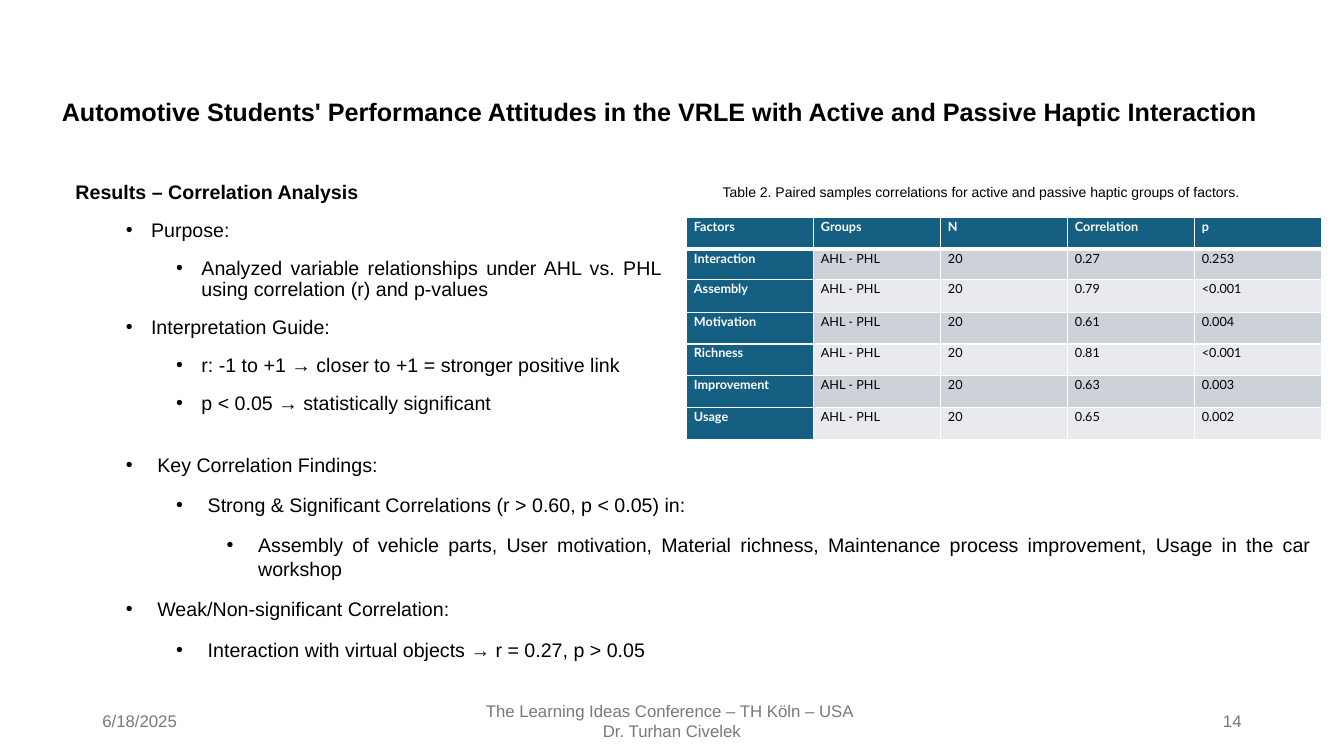
from lxml.etree import SubElement
from pptx import Presentation
from pptx.dml.color import RGBColor
from pptx.enum.text import MSO_ANCHOR as ANCHOR, PP_ALIGN as ALIGN
from pptx.oxml.ns import qn
from pptx.util import Pt

# Content
TITLE = ("Automotive Students' Performance Attitudes in the VRLE "
         "with Active and Passive Haptic Interaction ")
# (level, text); level 0 is a heading without a bullet
GUIDE = [
    (0, "Results – Correlation Analysis"),
    (1, "Purpose:"),
    (2, "Analyzed variable relationships under AHL vs. PHL using correlation (r) and p-values"),
    (1, "Interpretation Guide:"),
    (2, "r: -1 to +1 → closer to +1 = stronger positive link"),
    (2, "p < 0.05 → statistically significant"),
]
FINDINGS = [
    (1, "Key Correlation Findings:"),
    (2, "Strong & Significant Correlations (r > 0.60, p < 0.05) in:"),
    (3, "Assembly of vehicle parts, User motivation, Material richness, "
        "Maintenance process improvement, Usage in the car workshop"),
    (1, "Weak/Non-significant Correlation:"),
    (2, "Interaction with virtual objects → r = 0.27, p > 0.05"),
]
CAPTION = "Table 2. Paired samples correlations for active and passive haptic groups of factors."
HEADER = ("Factors", "Groups", "N", "Correlation", "p")
RESULTS = [
    ("Interaction", "0.27", "0.253"),
    ("Assembly", "0.79", "<0.001"),
    ("Motivation", "0.61", "0.004"),
    ("Richness", "0.81", "<0.001"),
    ("Improvement", "0.63", "0.003"),
    ("Usage", "0.65", "0.002"),
]
ROWS = [HEADER] + [(factor, "AHL - PHL", "20", r, p) for factor, r, p in RESULTS]
ROW_HEIGHTS = (22.6, 21.8, 23.1, 22.7, 22.7, 22.7, 22.7)
COL_WIDTH = 90.72
# (left, width, alignment, lines)
FOOTER = [
    (66, 216, ALIGN.LEFT, ["6/18/2025"]),
    (318, 324, ALIGN.CENTER,
     ["The Learning Ideas Conference – TH Köln – USA ", "Dr. Turhan Civelek"]),
    (678, 216, ALIGN.RIGHT, ["14"]),
]

BLACK = RGBColor(0x00, 0x00, 0x00)
WHITE = RGBColor(0xFF, 0xFF, 0xFF)
GREY = RGBColor(0x79, 0x79, 0x79)
TEAL = RGBColor(0x15, 0x60, 0x82)
BANDS = (RGBColor(0xE8, 0xEA, 0xED), RGBColor(0xCC, 0xD2, 0xD8))

prs = Presentation()
prs.slide_width, prs.slide_height = Pt(960), Pt(540)
s = prs.slides.add_slide(prs.slide_layouts[6])


def add_run(p, text, size, color=BLACK, bold=False, font="Arial"):
    r = p.add_run()
    r.text = text
    r.font.name, r.font.size, r.font.bold = font, Pt(size), bold
    r.font.color.rgb = color


def add_box(left, top, width, height, anchor=ANCHOR.TOP):
    tf = s.shapes.add_textbox(Pt(left), Pt(top), Pt(width), Pt(height)).text_frame
    tf.word_wrap = True
    tf.vertical_anchor = anchor
    return tf


def add_lines(tf, lines, size, align, color=BLACK, bold=False):
    for i, text in enumerate(lines):
        p = tf.add_paragraph() if i else tf.paragraphs[0]
        p.alignment = align
        add_run(p, text, size, color, bold)


def add_outline(tf, items, hang, spacing):
    """Bullets sit 36 pt further right per level, with the text hung after them."""
    for i, (level, text) in enumerate(items):
        p = tf.add_paragraph() if i else tf.paragraphs[0]
        p.alignment, p.level, p.line_spacing = ALIGN.JUSTIFY, level, spacing
        p.space_before = p.space_after = Pt(6)
        if level:
            pPr = p._p.get_or_add_pPr()
            pPr.set("marL", str(Pt(36 * level + hang)))
            pPr.set("indent", str(Pt(-hang)))
            SubElement(pPr, qn("a:buFont"), typeface="Arial")
            SubElement(pPr, qn("a:buChar"), char="•")
        add_run(p, text, 14, bold=level == 0)


def add_borders(cell, bottom):
    tcPr = cell._tc.get_or_add_tcPr()
    for side, width in (("L", 1), ("R", 1), ("T", 1), ("B", bottom)):
        ln = SubElement(tcPr, qn(f"a:ln{side}"), w=str(Pt(width)))
        SubElement(SubElement(ln, qn("a:solidFill")), qn("a:srgbClr"), val=str(WHITE))


# Title and outlines
title = add_box(34.5, 28.8, 878.4, 104.4, ANCHOR.MIDDLE)
add_lines(title, [TITLE], 18, ALIGN.CENTER, bold=True)
title.paragraphs[0].line_spacing = 0.9
add_outline(add_box(46.8, 126.7, 432.7, 187.2), GUIDE, 18, 0.9)
add_outline(add_box(46.8, 319.7, 897.1, 157.7), FINDINGS, 22.5, 1.0)

# Correlation table
add_lines(add_box(506.9, 127.4, 387.4, 19.4), [CAPTION], 10, ALIGN.CENTER)
table = s.shapes.add_table(len(ROWS), len(HEADER), Pt(490.3), Pt(155.5),
                           Pt(COL_WIDTH * len(HEADER)), Pt(sum(ROW_HEIGHTS))).table
for col in table.columns:
    col.width = Pt(COL_WIDTH)
for i, values in enumerate(ROWS):
    table.rows[i].height = Pt(ROW_HEIGHTS[i])
    for j, value in enumerate(values):
        cell = table.cell(i, j)
        heading = i == 0 or j == 0
        cell.margin_left = cell.margin_right = Pt(5.4)
        cell.margin_top = cell.margin_bottom = Pt(0)
        add_borders(cell, 1 if i else 3)
        cell.fill.solid()
        cell.fill.fore_color.rgb = TEAL if heading else BANDS[i % 2]
        p = cell.text_frame.paragraphs[0]
        p.alignment, p.line_spacing = ALIGN.JUSTIFY, Pt(12)
        add_run(p, value, 9, WHITE if heading else BLACK, heading, "Lato")

# Footer
for left, width, align, lines in FOOTER:
    add_lines(add_box(left, 500.5, width, 28.75, ANCHOR.MIDDLE), lines, 12, align, GREY)

prs.save("out.pptx")
